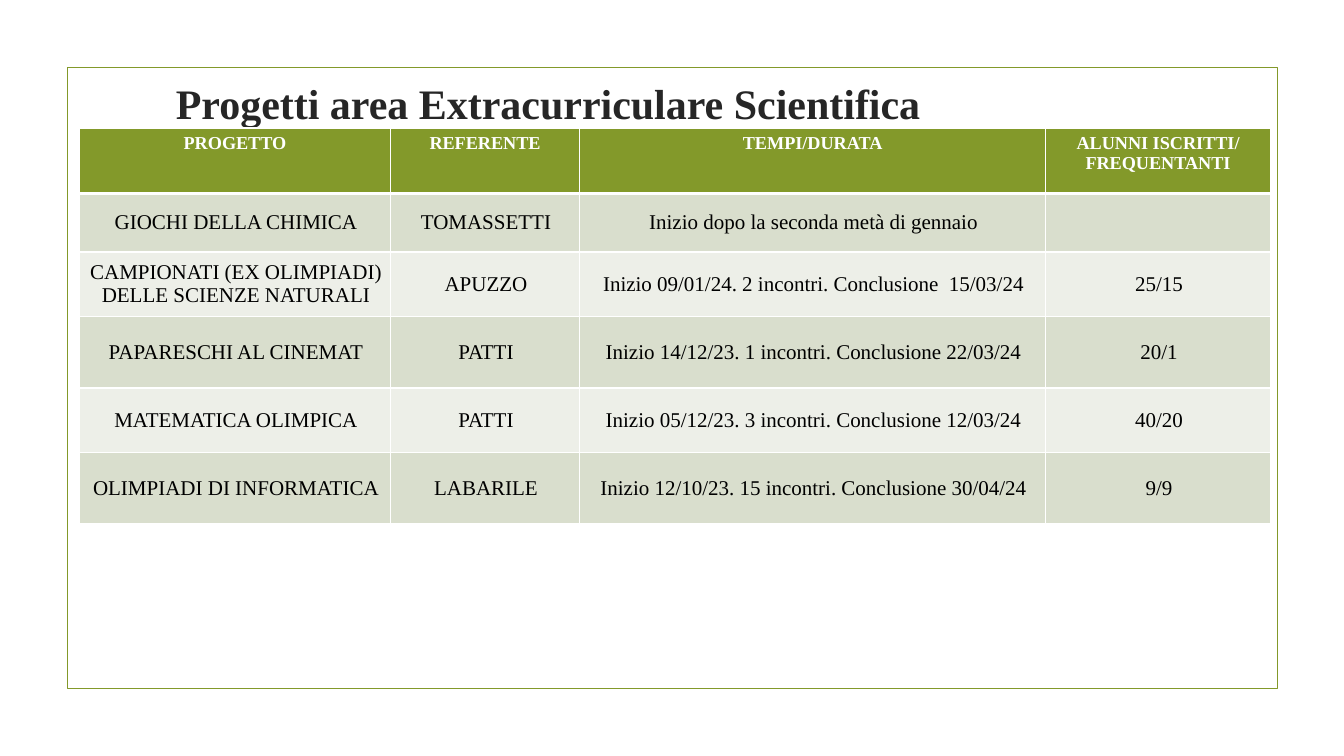
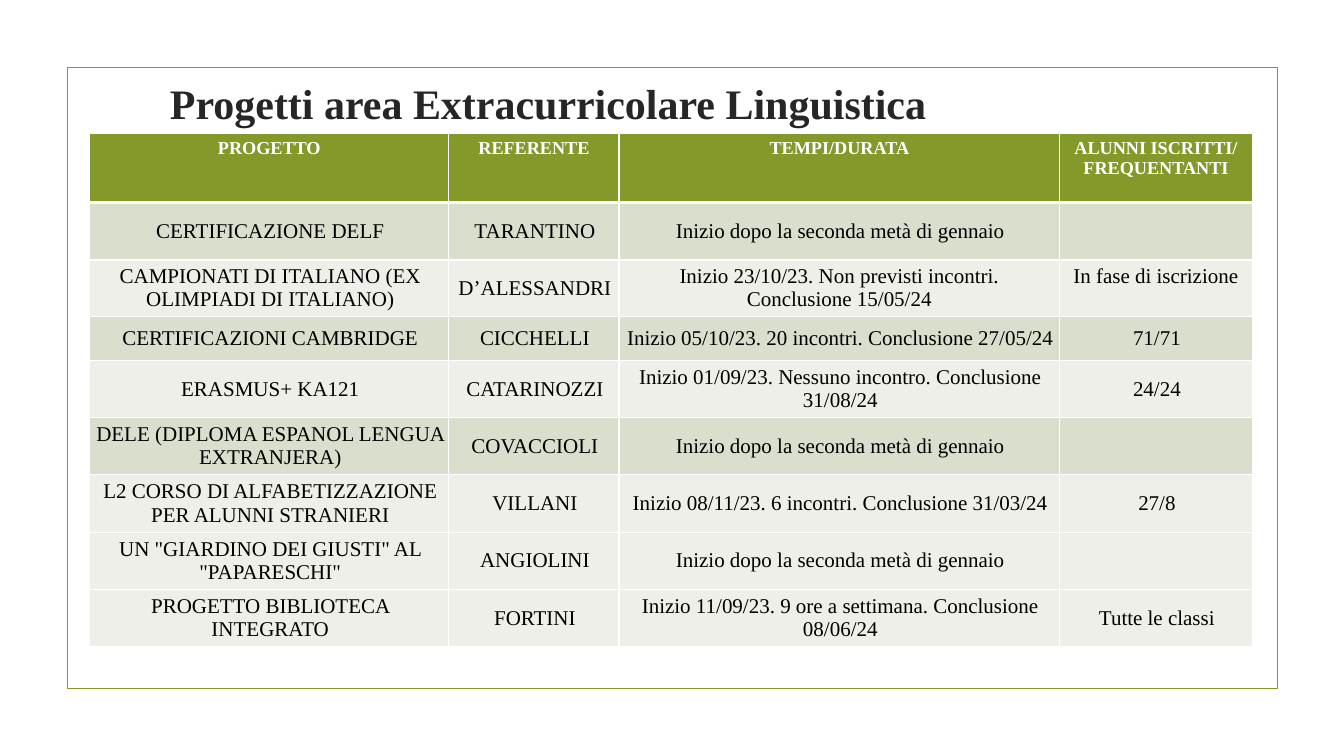
from lxml import etree
from pptx import Presentation
from pptx.dml.color import RGBColor
from pptx.enum import shapes, text
from pptx.oxml import ns
from pptx.util import Inches, Pt

HUES = {"green": "83992A", "ink": "262626", "black": "000000",
        "white": "FFFFFF", "dark": "D9DECD", "light": "EDEFE8"}
FONT = "Times New Roman"
HEAD = ["PROGETTO", "REFERENTE", "TEMPI/DURATA",
        "ALUNNI ISCRITTI/\nFREQUENTANTI"]
LATER = "Inizio dopo la seconda metà di gennaio"
THIN, THICK = 0.96, 3
LAST_DARK = 5  # rows below this one are no longer banded

SCIENCE = [
    ["GIOCHI DELLA CHIMICA", "TOMASSETTI", LATER, ""],
    ["CAMPIONATI (EX OLIMPIADI) DELLE SCIENZE NATURALI", "APUZZO",
     "Inizio 09/01/24. 2 incontri. Conclusione  15/03/24", "25/15"],
    ["PAPARESCHI AL CINEMAT", "PATTI",
     "Inizio 14/12/23. 1 incontri. Conclusione 22/03/24", "20/1"],
    ["MATEMATICA OLIMPICA", "PATTI",
     "Inizio 05/12/23. 3 incontri. Conclusione 12/03/24", "40/20"],
    ["OLIMPIADI DI INFORMATICA", "LABARILE",
     "Inizio 12/10/23. 15 incontri. Conclusione 30/04/24", "9/9"],
]
SPEECH = [
    ["CERTIFICAZIONE DELF", "TARANTINO", LATER, ""],
    ["CAMPIONATI DI ITALIANO (EX OLIMPIADI DI ITALIANO)", "D’ALESSANDRI",
     "Inizio 23/10/23. Non previsti incontri. Conclusione 15/05/24",
     "In fase di iscrizione"],
    ["CERTIFICAZIONI CAMBRIDGE", "CICCHELLI",
     "Inizio 05/10/23. 20 incontri. Conclusione 27/05/24", "71/71"],
    ["ERASMUS+ KA121", "CATARINOZZI",
     "Inizio 01/09/23. Nessuno incontro. Conclusione 31/08/24", "24/24"],
    ["DELE (DIPLOMA ESPANOL LENGUA EXTRANJERA)", "COVACCIOLI", LATER, ""],
    ["L2 CORSO DI ALFABETIZZAZIONE PER ALUNNI STRANIERI", "VILLANI",
     "Inizio 08/11/23. 6 incontri. Conclusione 31/03/24", "27/8"],
    ["UN \"GIARDINO DEI GIUSTI\" AL \"PAPARESCHI\"", "ANGIOLINI", LATER, ""],
    ["PROGETTO BIBLIOTECA INTEGRATO", "FORTINI",
     "Inizio 11/09/23. 9 ore a settimana. Conclusione 08/06/24",
     "Tutte le classi"],
]


def hue(name):
    return RGBColor.from_string(HUES[name])


def style(frame, size, color, bold=False):
    """Centre and format every paragraph of a text frame."""
    for para in frame.paragraphs:
        para.alignment = text.PP_ALIGN.CENTER
        font = para.font
        font.name, font.size, font.bold = FONT, Pt(size), bold
        font.color.rgb = hue(color)


def edge(cell, top, bottom):
    """Draw white borders around a cell."""
    props = cell._tc.get_or_add_tcPr()
    sides = {"lnL": THIN, "lnR": THIN, "lnT": top, "lnB": bottom}
    for place, (side, width) in enumerate(sides.items()):
        line = etree.Element(ns.qn(f"a:{side}"), w=str(Pt(width)))
        fill = etree.SubElement(line, ns.qn("a:solidFill"))
        etree.SubElement(fill, ns.qn("a:srgbClr"), val=HUES["white"])
        props.insert(place, line)


def add_page(deck, title):
    """Add a slide with the green frame and the title."""
    page = deck.slides.add_slide(deck.slide_layouts[5])
    frame = page.shapes.add_shape(
        shapes.MSO_SHAPE.RECTANGLE,
        Inches(0.67), Inches(0.67), Inches(12), Inches(6.16))
    frame.shadow.inherit = False
    frame.fill.background()
    frame.line.color.rgb = hue("green")
    frame.line.width = Pt(1.25)

    box = page.shapes.title
    box.left, box.top = Inches(0.74), Inches(0.67)
    box.width, box.height = Inches(9.4), Inches(0.69)
    box.text_frame.text = title
    box.text_frame.vertical_anchor = text.MSO_ANCHOR.MIDDLE
    style(box.text_frame, 30, "ink", True)
    return page


def fill_cell(cell, words, row, high):
    """Write and format one table cell."""
    cell.text = words
    cell.fill.solid()
    if row == 0:
        cell.fill.fore_color.rgb = hue("green")
        style(cell.text_frame, 13, "white", True)
    else:
        dark = row % 2 and row <= LAST_DARK
        cell.fill.fore_color.rgb = hue("dark" if dark else "light")
        style(cell.text_frame, 15, "black")
        if not high:
            cell.vertical_anchor = text.MSO_ANCHOR.MIDDLE
            cell.margin_left, cell.margin_right = Inches(0.04), Inches(0.02)
    edge(cell, THICK if row == 1 else THIN, THICK if row == 0 else THIN)


def add_grid(page, left, top, wide, tall, rows, high=()):
    """Add a table; cells listed in high keep their text at the top."""
    grid = page.shapes.add_table(
        len(tall), len(wide), Inches(left), Inches(top),
        Inches(sum(wide)), Inches(sum(tall))).table
    grid.horz_banding = False
    for col, width in zip(grid.columns, wide):
        col.width = Inches(width)
    for line, height in zip(grid.rows, tall):
        line.height = Inches(height)
    for row, line in enumerate([HEAD, *rows]):
        for col, words in enumerate(line):
            fill_cell(grid.cell(row, col), words, row, (row, col) in high)


def main():
    deck = Presentation()
    deck.slide_width, deck.slide_height = Inches(13.33), Inches(7.5)

    # Science projects
    page = add_page(deck, "Progetti area Extracurriculare Scientifica")
    add_grid(page, 0.79, 1.27, [3.08, 1.88, 4.62, 2.23],
             [0.65, 0.58, 0.64, 0.71, 0.64, 0.71], SCIENCE)

    # Language projects
    page = add_page(deck, "Progetti area Extracurricolare Linguistica")
    add_grid(page, 0.89, 1.32, [3.56, 1.69, 4.37, 1.91],
             [0.69, 0.57, 0.56, 0.44, 0.56] + [0.57] * 4, SPEECH,
             high=[(2, 2), (2, 3)])

    deck.save("out.pptx")


if __name__ == "__main__":
    main()
